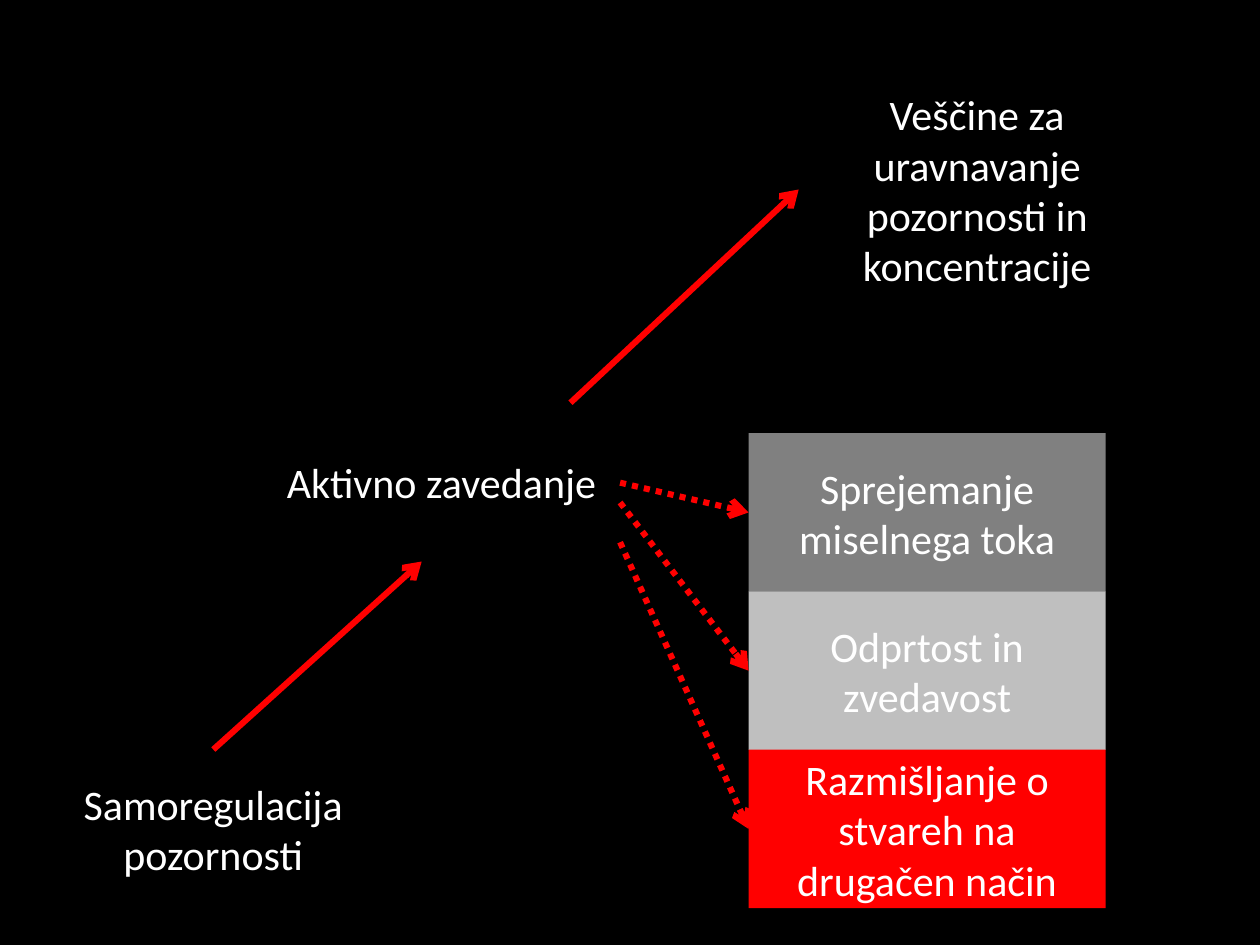
from typing import NamedTuple

import pptx
import pptx.dml.color
import pptx.enum.dml
import pptx.enum.shapes
import pptx.enum.text
import pptx.oxml.ns
import pptx.util
from lxml import etree

Cm = pptx.util.Cm
BLACK, WHITE, RED = "000000", "FFFFFF", "FF0000"
WIDE, HIGH = 7.2, 3.2
STACK_X, STACK_Y, STEP = 15.09, 8.73, 3.19
FAN_X = 12.5


class Box(NamedTuple):
    text: str
    x: float
    y: float
    high: float = HIGH
    fill: str = BLACK


class Arrow(NamedTuple):
    x1: float
    y1: float
    x2: float
    y2: float
    dotted: bool = False


def paint(color, value: str) -> None:
    color.rgb = pptx.dml.color.RGBColor.from_string(value)


def draw_box(slide, box: Box) -> None:
    shape = slide.shapes.add_shape(
        pptx.enum.shapes.MSO_SHAPE.RECTANGLE,
        Cm(box.x), Cm(box.y), Cm(WIDE), Cm(box.high))
    shape.shadow.inherit = False
    shape.fill.solid()
    paint(shape.fill.fore_color, box.fill)
    shape.line.fill.background()
    frame = shape.text_frame
    frame.text = box.text
    frame.word_wrap = True
    frame.vertical_anchor = pptx.enum.text.MSO_ANCHOR.MIDDLE
    para = frame.paragraphs[0]
    para.alignment = pptx.enum.text.PP_ALIGN.CENTER
    font = para.runs[0].font
    font.name = "Calibri"
    font.size = pptx.util.Pt(24)
    paint(font.color, WHITE)


def draw_arrow(slide, arrow: Arrow) -> None:
    link = slide.shapes.add_connector(
        pptx.enum.shapes.MSO_CONNECTOR.STRAIGHT,
        Cm(arrow.x1), Cm(arrow.y1), Cm(arrow.x2), Cm(arrow.y2))
    link.line.width = pptx.util.Pt(3.5)
    link.line.fill.solid()
    paint(link.line.fill.fore_color, RED)
    if arrow.dotted:
        # ROUND_DOT is stored as sysDot
        link.line.dash_style = pptx.enum.dml.MSO_LINE.ROUND_DOT
    # Arrowhead and no shadow
    qn = pptx.oxml.ns.qn
    props = link.element.spPr
    etree.SubElement(props.find(qn("a:ln")), qn("a:tailEnd"), type="arrow")
    etree.SubElement(props, qn("a:effectLst"))


# Steps along the rising diagonal
STEPS = [
    Box("Samoregulacija pozornosti", 0.7, 15.11),
    Box("Aktivno zavedanje", 5.3, 8.12),
    Box("Veščine za uravnavanje pozornosti in koncentracije", 16.1, 1.32, 5),
]

# Stacked attitudes at the right
STACK = [
    ("Sprejemanje miselnega toka", "808080"),
    ("Odprtost in zvedavost", "BFBFBF"),
    ("Razmišljanje o stvareh na drugačen način", RED),
]

RISE = [Arrow(4.3, 15.11, 8.5, 11.32), Arrow(11.5, 8.12, 16.1, 3.82)]
FAN_Y = [9.73, 10.13, 10.93]


def main() -> None:
    deck = pptx.Presentation()
    deck.slide_width, deck.slide_height = Cm(25.4), Cm(19.05)
    slide = deck.slides.add_slide(deck.slide_layouts[6])
    slide.background.fill.solid()
    paint(slide.background.fill.fore_color, BLACK)

    # Boxes
    stack = [Box(text, STACK_X, STACK_Y + i * STEP, fill=fill)
             for i, (text, fill) in enumerate(STACK)]
    for box in STEPS + stack:
        draw_box(slide, box)

    # Solid arrows up, dotted arrows to the middle of each stacked box
    fan = [Arrow(FAN_X, y, box.x, box.y + HIGH / 2, True)
           for y, box in zip(FAN_Y, stack)]
    for arrow in RISE + fan:
        draw_arrow(slide, arrow)

    deck.save("out.pptx")


if __name__ == "__main__":
    main()
